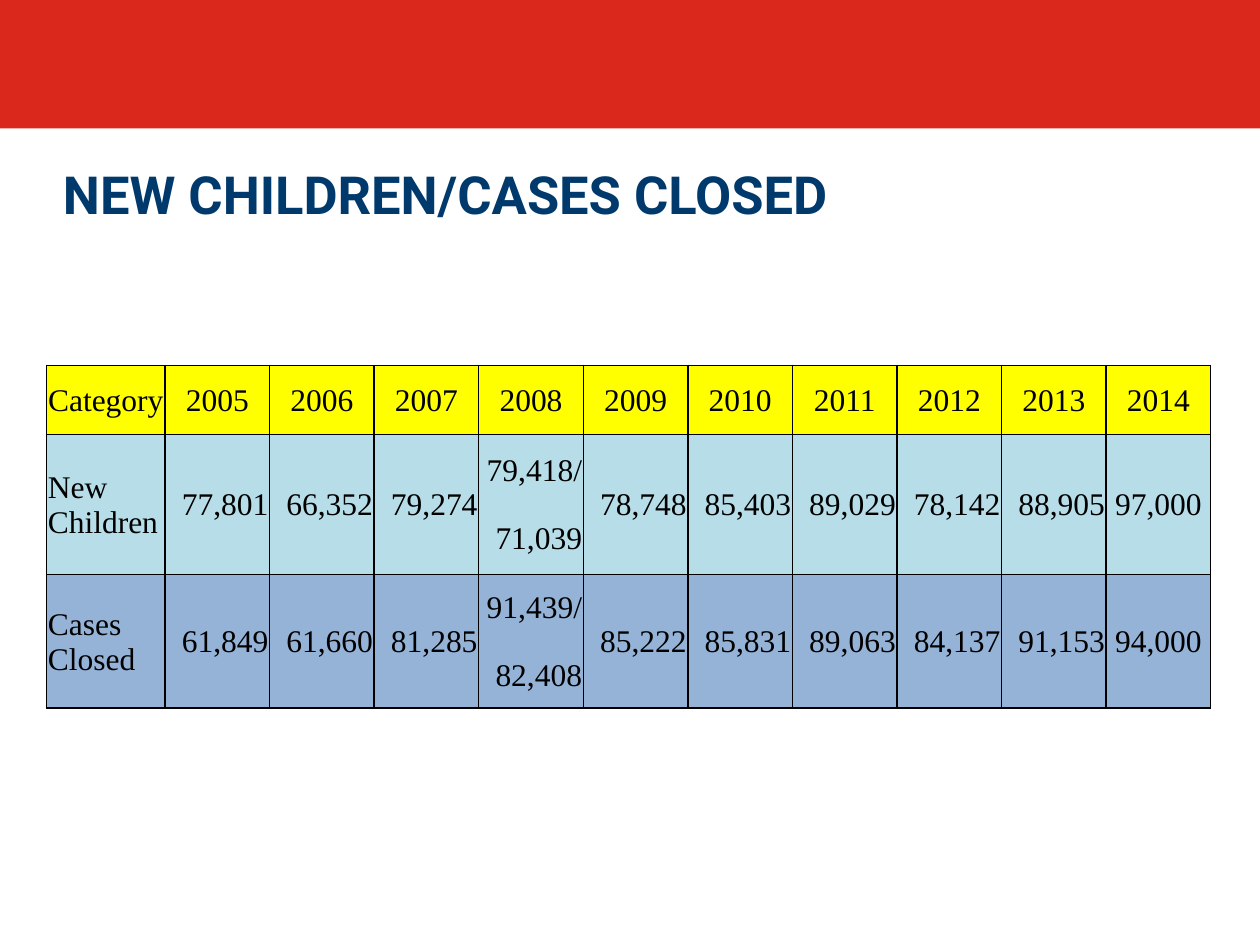
from dataclasses import dataclass

from lxml.etree import SubElement
from pptx import Presentation
from pptx.dml.color import RGBColor
from pptx.enum.shapes import MSO_SHAPE
from pptx.enum.text import MSO_ANCHOR, PP_ALIGN
from pptx.oxml.ns import qn
from pptx.util import Inches, Pt


@dataclass(frozen=True)
class Theme:
    banner: str = "DA291C"
    title: str = "00396B"
    text: str = "000000"
    border: str = "000000"
    row_fills: tuple = ("FFFF00", "B7DEE8", "95B3D7")
    title_font: str = "Roboto"
    table_font: str = "Times New Roman"
    title_size: int = 30
    table_size: int = 18
    split_gap: int = 19
    border_width: int = 1


class SlideBuilder:
    def __init__(self, slide, theme):
        self.s = slide
        self.theme = theme

    def banner(self, x, y, w, h):
        sp = self.s.shapes.add_shape(
            MSO_SHAPE.RECTANGLE, Inches(x), Inches(y), Inches(w), Inches(h))
        sp.shadow.inherit = False
        sp.fill.solid()
        sp.fill.fore_color.rgb = RGBColor.from_string(self.theme.banner)
        sp.line.fill.background()

    def title(self, text, x, y, w, h):
        sp = self.s.shapes.add_textbox(Inches(x), Inches(y), Inches(w), Inches(h))
        tf = sp.text_frame
        tf.word_wrap = True
        tf.margin_left = tf.margin_right = tf.margin_top = tf.margin_bottom = 0
        p = tf.paragraphs[0]
        p.text = text
        t = self.theme
        self.style(p, t.title_font, t.title_size, t.title, bold=True)

    def table(self, rows, x, y, col_widths, row_heights):
        shape = self.s.shapes.add_table(
            len(rows), len(col_widths), Inches(x), Inches(y),
            Inches(sum(col_widths)), Inches(sum(row_heights)))
        table = shape.table
        for column, width in zip(table.columns, col_widths):
            column.width = Inches(width)
        for row, height in zip(table.rows, row_heights):
            row.height = Inches(height)
        last = len(col_widths) - 1
        for i, (row, fill) in enumerate(zip(rows, self.theme.row_fills)):
            for j, text in enumerate(row):
                if i == 0 or j == last:
                    align = PP_ALIGN.CENTER
                else:
                    align = PP_ALIGN.RIGHT if j else PP_ALIGN.LEFT
                self.cell(table.cell(i, j), text, fill, align)

    def cell(self, cell, text, fill, align):
        t = self.theme
        cell.margin_left = cell.margin_right = cell.margin_top = Inches(0.01)
        cell.margin_bottom = 0
        cell.vertical_anchor = MSO_ANCHOR.MIDDLE
        self.borders(cell)
        cell.fill.solid()
        cell.fill.fore_color.rgb = RGBColor.from_string(fill)
        tf = cell.text_frame
        tf.text = text
        for k, p in enumerate(tf.paragraphs):
            p.alignment = align
            if k:
                p.space_before = Pt(t.split_gap)
            self.style(p, t.table_font, t.table_size, t.text)

    def borders(self, cell):
        tcPr = cell._tc.get_or_add_tcPr()
        for side in ("a:lnL", "a:lnR", "a:lnT", "a:lnB"):
            ln = SubElement(tcPr, qn(side), w=str(Pt(self.theme.border_width)))
            solid = SubElement(ln, qn("a:solidFill"))
            SubElement(solid, qn("a:srgbClr"), val=self.theme.border)

    def style(self, p, font, size, color, bold=False):
        p.font.name = font
        p.font.size = Pt(size)
        p.font.bold = bold
        p.font.color.rgb = RGBColor.from_string(color)


def main():
    prs = Presentation()
    prs.slide_width, prs.slide_height = Inches(10), Inches(7.5)
    s = prs.slides.add_slide(prs.slide_layouts[6])
    builder = SlideBuilder(s, Theme())

    # Banner and title
    builder.banner(0, 0, 10, 1.02)
    builder.title("NEW CHILDREN/CASES CLOSED", 0.5, 1.29, 9, 0.83)

    # Yearly figures; a line break splits the two counts for 2008
    years = [str(year) for year in range(2005, 2015)]
    rows = [
        ["Category", *years],
        ["New Children", "77,801", "66,352", "79,274", "79,418/\n71,039",
         "78,748", "85,403", "89,029", "78,142", "88,905", "97,000"],
        ["Cases Closed", "61,849", "61,660", "81,285", "91,439/\n82,408",
         "85,222", "85,831", "89,063", "84,137", "91,153", "94,000"],
    ]
    builder.table(rows, 0.37, 2.9, [0.94] + [0.83] * len(years),
                  [0.55, 1.11, 1.06])

    prs.save("out.pptx")


if __name__ == "__main__":
    main()
